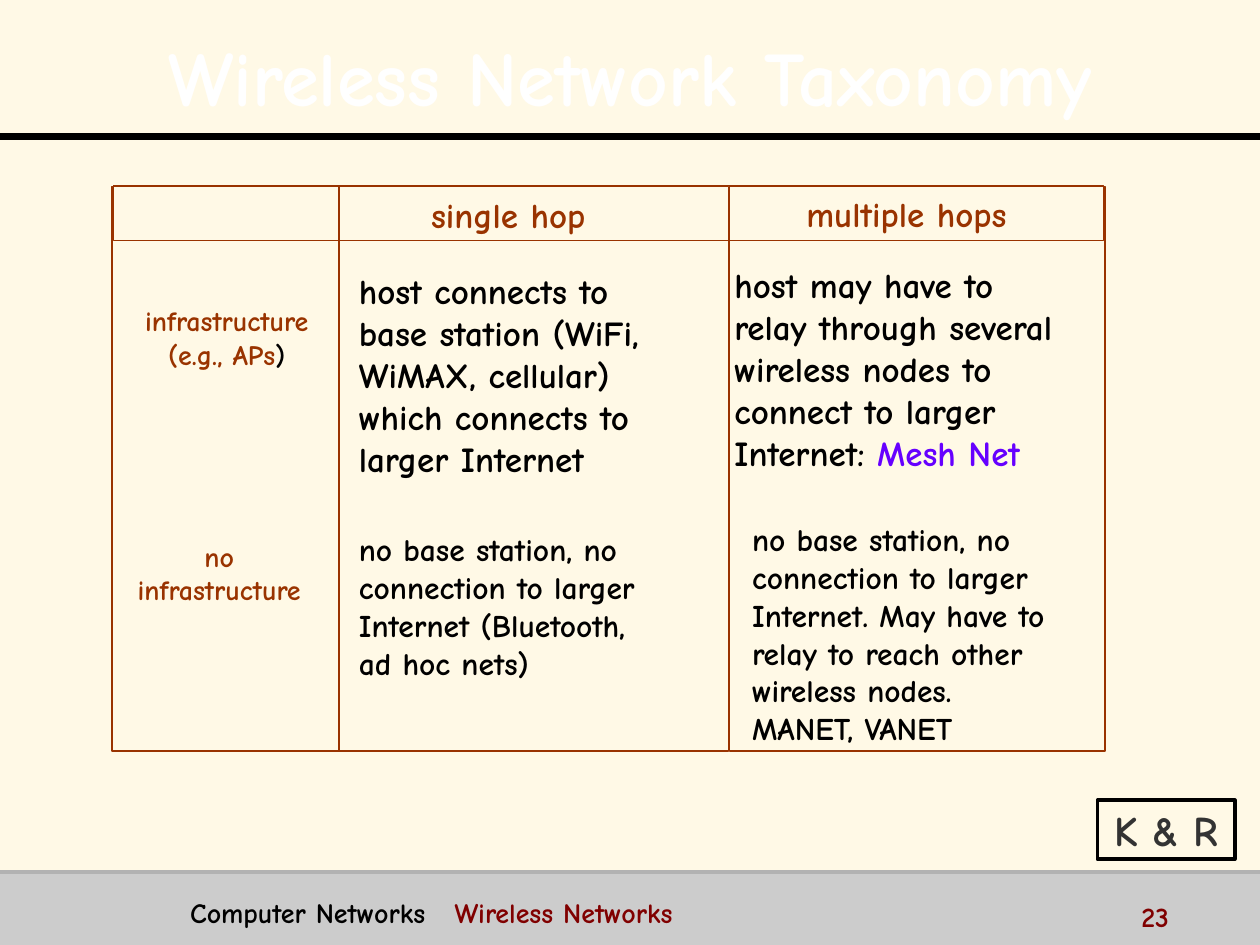
from lxml import etree
from pptx import Presentation
from pptx.dml.color import RGBColor
from pptx.enum.shapes import MSO_CONNECTOR, MSO_SHAPE
from pptx.enum.text import MSO_ANCHOR, MSO_AUTO_SIZE, PP_ALIGN
from pptx.oxml.ns import qn
from pptx.util import Inches, Pt

LEFT, CENTER = PP_ALIGN.LEFT, PP_ALIGN.CENTER
MIDDLE = MSO_ANCHOR.MIDDLE
GROW = MSO_AUTO_SIZE.SHAPE_TO_FIT_TEXT
RECTANGLE = MSO_SHAPE.RECTANGLE
STRAIGHT = MSO_CONNECTOR.STRAIGHT
FONT = "Comic Neue"
COLORS = {
    "cream": "FFF9E6", "black": "000000", "white": "FFFFFF", "rust": "993300",
    "violet": "6600FF", "maroon": "800000", "charcoal": "333333",
    "band": "CCCCCC", "edge": "B2B2B2",
}
TABLE_FRAMES = [
    (0.9, 1.47, 7.86, 0.44),
    (0.89, 1.48, 1.8, 4.48),
    (2.69, 1.48, 3.09, 4.48),
    (5.79, 1.48, 2.98, 4.48),
]
LABELS = [
    ((3.27, 1.49, 1.53, 0.44), 20, ["single hop"]),
    ((6.22, 1.48, 1.95, 0.44), 20, ["multiple hops"]),
    ((0.93, 2.36, 1.74, 0.64), 16,
     ["infrastructure", [("(e.g., APs", None), (")", "black")]]),
    ((0.87, 4.23, 1.74, 0.64), 16, ["no", "infrastructure"]),
]
CELLS = [
    ((2.75, 2.09, 2.83, 1.78), 20,
     ["host connects to", "base station (WiFi,", "WiMAX, cellular)",
      "which connects to", "larger Internet"]),
    ((2.75, 4.16, 2.82, 1.31), 18,
     ["no base station, no", "connection to larger", "Internet (Bluetooth,",
      "ad hoc nets)"]),
    ((5.73, 2.04, 3.11, 1.78), 20,
     ["host may have to", "relay through several", "wireless nodes to",
      "connect to larger", [("Internet: ", None), ("Mesh Net", "violet")]]),
    ((5.87, 4.08, 2.99, 1.92), 18,
     ["no base station, no", "connection to larger", "Internet. May have to",
      "relay to reach other", "wireless nodes.", "MANET, VANET"]),
]


def rgb(name):
    return RGBColor.from_string(COLORS[name])


def inches(place):
    return [Inches(value) for value in place]


def style_font(font, size, color):
    font.name = FONT
    font.size = Pt(size)
    font.bold = True
    font.color.rgb = rgb(color)


def write_lines(frame, lines, size, color, align=LEFT):
    for index, line in enumerate(lines):
        para = frame.paragraphs[0] if index == 0 else frame.add_paragraph()
        para.alignment = align
        style_font(para.font, size, color)
        for text, accent in [(line, None)] if isinstance(line, str) else line:
            span = para.add_run()
            span.text = text
            if accent:
                span.font.color.rgb = rgb(accent)


def add_text(page, place, lines, size, color, align=LEFT, wrap=False):
    box = page.shapes.add_textbox(*inches(place))
    frame = box.text_frame
    frame.word_wrap = wrap
    if not wrap:
        frame.auto_size = GROW
    write_lines(frame, lines, size, color, align)


def add_rectangle(page, place, fill=None, line=None, width=0.75):
    box = page.shapes.add_shape(RECTANGLE, *inches(place))
    box.shadow.inherit = False
    if fill:
        box.fill.solid()
        box.fill.fore_color.rgb = rgb(fill)
    else:
        box.fill.background()
    if line:
        box.line.color.rgb = rgb(line)
        box.line.width = Pt(width)
    else:
        box.line.fill.background()
    return box


def add_rule(page, top, color, width):
    rule = page.shapes.add_connector(STRAIGHT, *inches((0, top, 10, top)))
    rule.line.color.rgb = rgb(color)
    rule.line.width = Pt(width)
    etree.SubElement(rule._element.spPr, qn("a:effectLst"))


def add_text_shadow(span):
    effects = etree.Element(qn("a:effectLst"))
    shadow = etree.SubElement(effects, qn("a:outerShdw"), dist="35921", dir="2700000")
    etree.SubElement(shadow, qn("a:srgbClr"), val=COLORS["black"])
    span.font._element.find(qn("a:solidFill")).addnext(effects)


def add_title(page, text):
    title = page.shapes.title
    title.left, title.top, title.width, title.height = inches((0.2, 0.13, 9.61, 0.87))
    frame = title.text_frame
    frame.vertical_anchor = MIDDLE
    frame.word_wrap = True
    para = frame.paragraphs[0]
    para.alignment = CENTER
    para.line_spacing = 1.1
    span = para.add_run()
    span.text = text
    style_font(span.font, 44, "white")
    add_text_shadow(span)


def add_footer(page):
    box = page.shapes.add_textbox(*inches((1.41, 7.06, 7.28, 0.31)))
    frame = box.text_frame
    frame.word_wrap = True
    properties = frame.paragraphs[0]._p.get_or_add_pPr()
    tabs = etree.SubElement(properties, qn("a:tabLst"))
    etree.SubElement(tabs, qn("a:tab"), pos=str(Inches(2.1)), algn="l")
    footer = [("Computer Networks\t", None), ("Wireless Networks", "maroon")]
    write_lines(frame, [footer], 16, "black")


def add_credit(page):
    box = add_rectangle(page, (8.71, 6.35, 1.09, 0.47), line="black", width=2)
    frame = box.text_frame
    frame.word_wrap = False
    frame.vertical_anchor = MIDDLE
    write_lines(frame, ["K & R"], 24, "charcoal", CENTER)


def main():
    deck = Presentation()
    deck.slide_width, deck.slide_height = Inches(10), Inches(7.5)
    page = deck.slides.add_slide(deck.slide_layouts[5])
    page.background.fill.solid()
    page.background.fill.fore_color.rgb = rgb("cream")

    add_rectangle(page, (0, 6.92, 10, 0.58), fill="band")
    add_rule(page, 1.08, "black", 4)
    add_rule(page, 6.92, "edge", 2)
    add_title(page, "Wireless Network Taxonomy")
    for place, size, lines in LABELS:
        add_text(page, place, lines, size, "rust", CENTER)
    for place in TABLE_FRAMES:
        add_rectangle(page, place, line="rust")
    for place, size, lines in CELLS:
        add_text(page, place, lines, size, "black")
    add_credit(page)
    add_text(page, (8.96, 7.09, 1, 0.25), ["23"], 16, "maroon", wrap=True)
    add_footer(page)
    deck.save("out.pptx")


if __name__ == "__main__":
    main()
